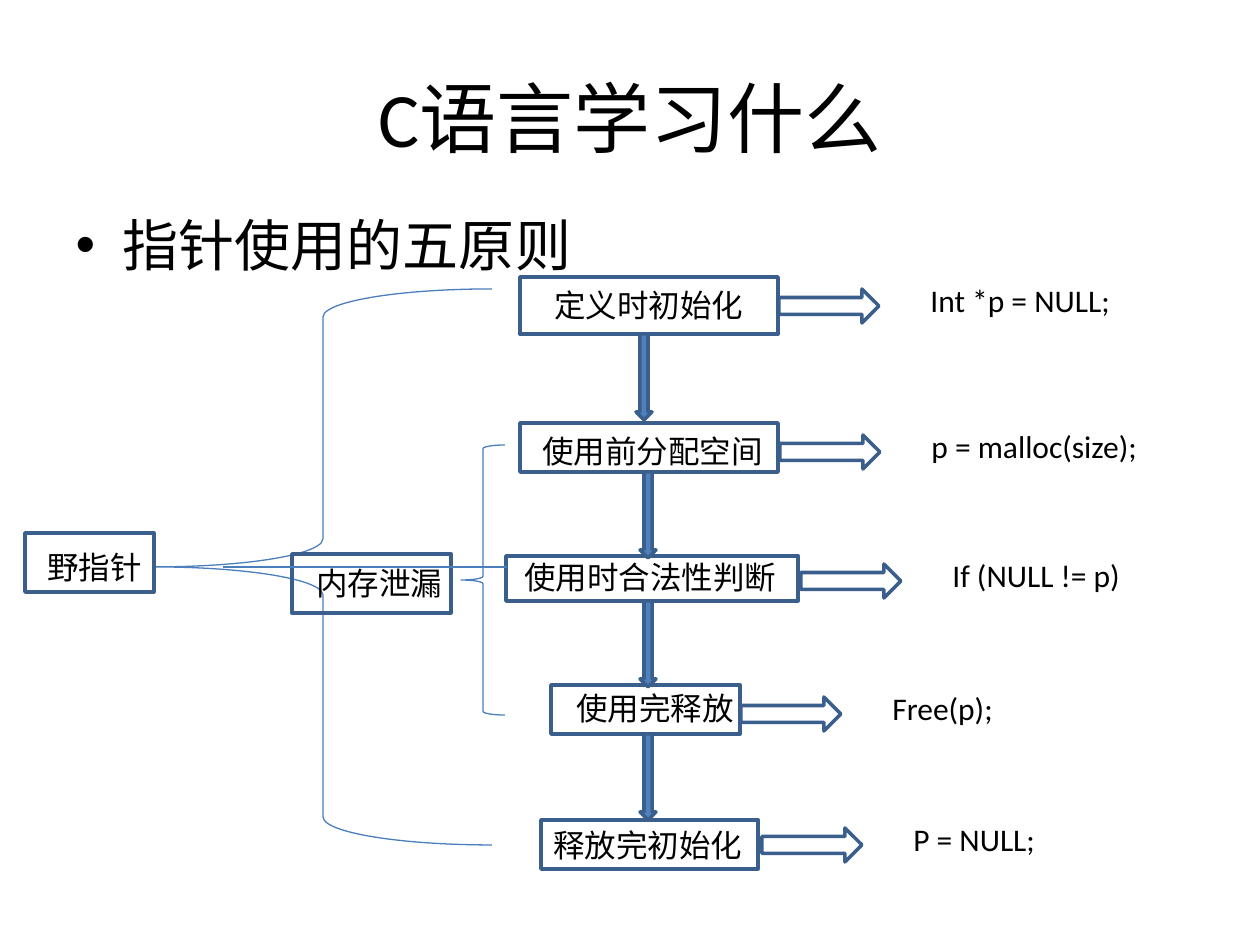
from lxml.etree import SubElement
from pptx import Presentation
from pptx.dml.color import RGBColor
from pptx.enum.shapes import MSO_CONNECTOR, MSO_SHAPE
from pptx.enum.text import MSO_ANCHOR, MSO_AUTO_SIZE, PP_ALIGN
from pptx.oxml.ns import qn
from pptx.util import Emu, Pt

TITLE = "C语言学习什么"
TOPIC = "指针使用的五原则"
RECT, STEP = MSO_SHAPE.RECTANGLE, MSO_SHAPE.FLOWCHART_PROCESS

# kind, box, label, label place (x, y, w), side arrow (x, y), code, code width
RULES = [
    (RECT, (520, 277, 258, 57), "定义时初始化", (542, 280, 217), (779, 289), "Int *p = NULL;", 208),
    (STEP, (520, 423, 258, 49), "使用前分配空间", (530, 426, 248), (780, 435), "p = malloc(size);", 233),
    (STEP, (506, 556, 292, 45), "使用时合法性判断", (512, 552, 280), (801, 564), "If (NULL != p)", 195),
    (STEP, (551, 685, 189, 49), "使用完释放", (564, 683, 184), (741, 697), "Free(p);", 127),
    (STEP, (541, 820, 217, 49), "释放完初始化", (541, 820, 217), (762, 828), "P = NULL;", 149),
]
DOWN_X = [636, 640, 640, 640]
# box, label, label place, brace
RISKS = [
    ((25, 533, 129, 59), "野指针", (35, 542, 136), (154, 289, 338, 556)),
    ((292, 554, 159, 59), "内存泄漏", (304, 558, 176), (461, 445, 44, 270)),
]
LINK = (507, 567, 223, 567)

EDGE, THIN, BLUE, BLACK = "3A5F8C", "4B7EBC", "4F81BD", "000000"
TEXT_H = 50


def px(*nums):
    return [Emu(round(n * 914400 / 126)) for n in nums]


def color(code):
    return RGBColor.from_string(code)


def draw(kind, place, line=EDGE, width=2, fill=None):
    shape = slide.shapes.add_shape(kind, *px(*place))
    shape.shadow.inherit = False
    if fill:
        shape.fill.solid()
        shape.fill.fore_color.rgb = color(fill)
    else:
        shape.fill.background()
    shape.line.color.rgb = color(line)
    shape.line.width = Pt(width)


def put(para, text, size):
    run = para.add_run()
    run.text = text
    run.font.name = "Calibri"
    run.font.size = Pt(size)
    run.font.color.rgb = color(BLACK)


def write(text, x, y, w, wrap=False):
    frame = slide.shapes.add_textbox(*px(x, y, w, TEXT_H)).text_frame
    frame.word_wrap = wrap
    frame.auto_size = MSO_AUTO_SIZE.SHAPE_TO_FIT_TEXT
    put(frame.paragraphs[0], text, 18)


def place(holder, box):
    holder.left, holder.top, holder.width, holder.height = px(*box)
    return holder.text_frame


deck = Presentation()
deck.slide_width, deck.slide_height = px(1260, 945)
slide = deck.slides.add_slide(deck.slide_layouts[1])

head = place(slide.shapes.title, (63, 38, 1134, 158))
head.vertical_anchor = MSO_ANCHOR.MIDDLE
head.paragraphs[0].alignment = PP_ALIGN.CENTER
put(head.paragraphs[0], TITLE, 44)
body = place(slide.placeholders[1], (63, 204, 1172, 735))
put(body.paragraphs[0], TOPIC, 32)

for kind, box, label, spot, (x, y), code, wide in RULES:
    draw(kind, box)
    write(label, *spot)
    draw(MSO_SHAPE.RIGHT_ARROW, (x, y, 100, 34))
    write(code, x + 139, y - 14, wide)

for x, rule in zip(DOWN_X, RULES):
    _, top, _, high = rule[1]
    draw(MSO_SHAPE.DOWN_ARROW, (x, top + high, 16, 86), fill=BLUE)

for box, label, spot, brace in RISKS:
    draw(MSO_SHAPE.LEFT_BRACE, brace, THIN, 0.75)
    draw(RECT, box)
    write(label, *spot, wrap=True)

link = slide.shapes.add_connector(MSO_CONNECTOR.STRAIGHT, *px(*LINK))
link.line.color.rgb = color(THIN)
link.line.width = Pt(0.75)
SubElement(link._element.spPr, qn("a:effectLst"))

deck.save("out.pptx")
